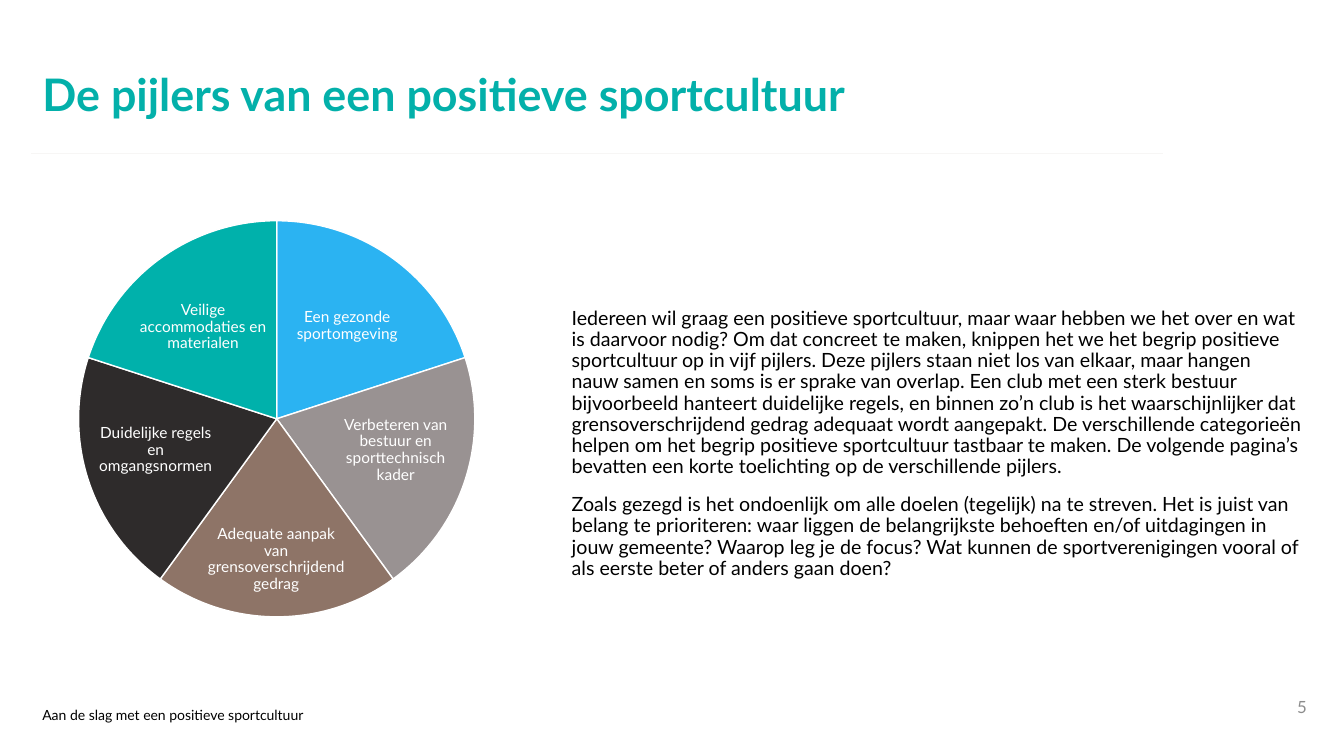
"""Build the slide on the five pillars of a positive sports culture."""
from dataclasses import dataclass

from lxml import etree
from pptx import Presentation
from pptx.dml.color import RGBColor
from pptx.enum.shapes import MSO_CONNECTOR, MSO_SHAPE
from pptx.enum.text import MSO_ANCHOR, MSO_AUTO_SIZE, PP_ALIGN
from pptx.oxml.ns import qn
from pptx.util import Emu, Pt

EMU_PER_PX = 9144
FONT = "Lato"
TEAL, BLACK, WHITE = "03B0AA", "000000", "FFFFFF"
LEFT, CENTER, RIGHT = PP_ALIGN.LEFT, PP_ALIGN.CENTER, PP_ALIGN.RIGHT
TOP, MIDDLE = MSO_ANCHOR.TOP, MSO_ANCHOR.MIDDLE
NO_AUTO_SIZE = MSO_AUTO_SIZE.NONE
PIE, STRAIGHT = MSO_SHAPE.PIE, MSO_CONNECTOR.STRAIGHT
ADJUSTMENT_PER_DEGREE = 0.6
FIRST_ANGLE = 270


@dataclass(frozen=True)
class Box:
    left: int
    top: int
    width: int
    height: int


@dataclass(frozen=True)
class TextStyle:
    size: int
    color: str
    bold: bool = False
    alignment: PP_ALIGN = LEFT
    anchor: MSO_ANCHOR = TOP
    inset: int = 0
    line_spacing: float = 1.0
    space_after: int = 0


@dataclass(frozen=True)
class Pillar:
    label: str
    color: str
    label_box: Box


TITLE_STYLE = TextStyle(32, TEAL, bold=True, anchor=MIDDLE, line_spacing=0.9)
BODY_STYLE = TextStyle(14, BLACK, inset=4, line_spacing=0.9, space_after=12)
LABEL_STYLE = TextStyle(11, WHITE, alignment=CENTER, anchor=MIDDLE, inset=2, line_spacing=0.9)
FOOTER_STYLE = TextStyle(10, BLACK)
NUMBER_STYLE = TextStyle(12, "8C8C8C", alignment=RIGHT, anchor=MIDDLE, inset=10)

PIE_BOX = Box(78, 219, 393, 393)
PILLARS = [
    Pillar("Een gezonde sportomgeving", "2BB3F2", Box(278, 278, 133, 91)),
    Pillar("Verbeteren van bestuur en sporttechnisch kader", "999292", Box(334, 397, 117, 99)),
    Pillar("Adequate aanpak van grensoverschrijdend gedrag", "8E7467", Box(204, 513, 140, 84)),
    Pillar("Duidelijke regels en omgangsnormen", "2E2B2B", Box(96, 397, 117, 99)),
    Pillar("Veilige accommodaties en materialen", "00B1AB", Box(135, 279, 133, 91)),
]
BODY_TEXTS = [
    "Iedereen wil graag een positieve sportcultuur, maar waar hebben we het over en wat is "
    "daarvoor nodig? Om dat concreet te maken, knippen het we het begrip positieve sportcultuur "
    "op in vijf pijlers. Deze pijlers staan niet los van elkaar, maar hangen nauw samen en soms "
    "is er sprake van overlap. Een club met een sterk bestuur bijvoorbeeld hanteert duidelijke "
    "regels, en binnen zo’n club is het waarschijnlijker dat grensoverschrijdend gedrag adequaat "
    "wordt aangepakt. De verschillende categorieën helpen om het begrip positieve sportcultuur "
    "tastbaar te maken. De volgende pagina’s bevatten een korte toelichting op de verschillende "
    "pijlers.",
    "Zoals gezegd is het ondoenlijk om alle doelen (tegelijk) na te streven. Het is juist van "
    "belang te prioriteren: waar liggen de belangrijkste behoeften en/of uitdagingen in jouw "
    "gemeente? Waarop leg je de focus? Wat kunnen de sportverenigingen vooral of als eerste "
    "beter of anders gaan doen?",
]


def px(length: int) -> Emu:
    return Emu(length * EMU_PER_PX)


def rgb(color: str) -> RGBColor:
    return RGBColor.from_string(color)


def frame(box: Box) -> tuple[Emu, Emu, Emu, Emu]:
    return px(box.left), px(box.top), px(box.width), px(box.height)


def write_text(shape, texts: list[str], style: TextStyle) -> None:
    text_frame = shape.text_frame
    text_frame.text = "\n".join(texts)
    text_frame.word_wrap = True
    text_frame.auto_size = NO_AUTO_SIZE
    text_frame.vertical_anchor = style.anchor
    text_frame.margin_left = text_frame.margin_right = px(style.inset)
    text_frame.margin_top = text_frame.margin_bottom = px(style.inset)
    for paragraph in text_frame.paragraphs:
        paragraph.alignment = style.alignment
        paragraph.line_spacing = style.line_spacing
        paragraph.space_before = Pt(0)
        paragraph.space_after = Pt(style.space_after)
        for run in paragraph.runs:
            run.font.name = FONT
            run.font.size = Pt(style.size)
            run.font.bold = style.bold
            run.font.color.rgb = rgb(style.color)


def fill_placeholder(shape, box: Box, texts: list[str], style: TextStyle) -> None:
    shape.left, shape.top, shape.width, shape.height = frame(box)
    write_text(shape, texts, style)


def remove_bullets(shape) -> None:
    for paragraph in shape.text_frame.paragraphs:
        properties = paragraph._p.get_or_add_pPr()
        properties.set("marL", "0")
        properties.set("indent", "0")
        etree.SubElement(properties, qn("a:buNone"))


def add_label(slide, box: Box, text: str, style: TextStyle) -> None:
    write_text(slide.shapes.add_textbox(*frame(box)), [text], style)


def add_rule(slide, left: int, right: int, top: int, color: str) -> None:
    rule = slide.shapes.add_connector(STRAIGHT, px(left), px(top), px(right), px(top))
    rule.line.color.rgb = rgb(color)
    rule.line.width = Pt(0.5)
    etree.SubElement(rule._element.spPr, qn("a:effectLst"))


def add_wedge(slide, start: int, end: int, color: str) -> None:
    wedge = slide.shapes.add_shape(PIE, *frame(PIE_BOX))
    wedge.adjustments[0] = start * ADJUSTMENT_PER_DEGREE
    wedge.adjustments[1] = end * ADJUSTMENT_PER_DEGREE
    wedge.shadow.inherit = False
    wedge.fill.solid()
    wedge.fill.fore_color.rgb = rgb(color)
    wedge.line.color.rgb = rgb(WHITE)
    wedge.line.width = Pt(1)


def add_pillars(slide) -> None:
    sweep = 360 // len(PILLARS)
    for index, pillar in enumerate(PILLARS):
        start = (FIRST_ANGLE + index * sweep) % 360
        add_wedge(slide, start, (start + sweep) % 360, pillar.color)
        add_label(slide, pillar.label_box, pillar.label, LABEL_STYLE)


def main() -> None:
    presentation = Presentation()
    presentation.slide_width, presentation.slide_height = px(1333), px(750)
    slide = presentation.slides.add_slide(presentation.slide_layouts[1])
    title, body = slide.shapes.title, slide.placeholders[1]
    fill_placeholder(title, Box(42, 78, 1111, 36),
                     ["De pijlers van een positieve sportcultuur"], TITLE_STYLE)
    fill_placeholder(body, Box(563, 302, 733, 370), BODY_TEXTS, BODY_STYLE)
    remove_bullets(body)
    add_rule(slide, 31, 1153, 152, "F7F6F5")
    add_pillars(slide)
    add_label(slide, Box(42, 701, 400, 17),
              "Aan de slag met een positieve sportcultuur", FOOTER_STYLE)
    add_label(slide, Box(1006, 681, 300, 40), "5", NUMBER_STYLE)
    presentation.save("out.pptx")


if __name__ == "__main__":
    main()
